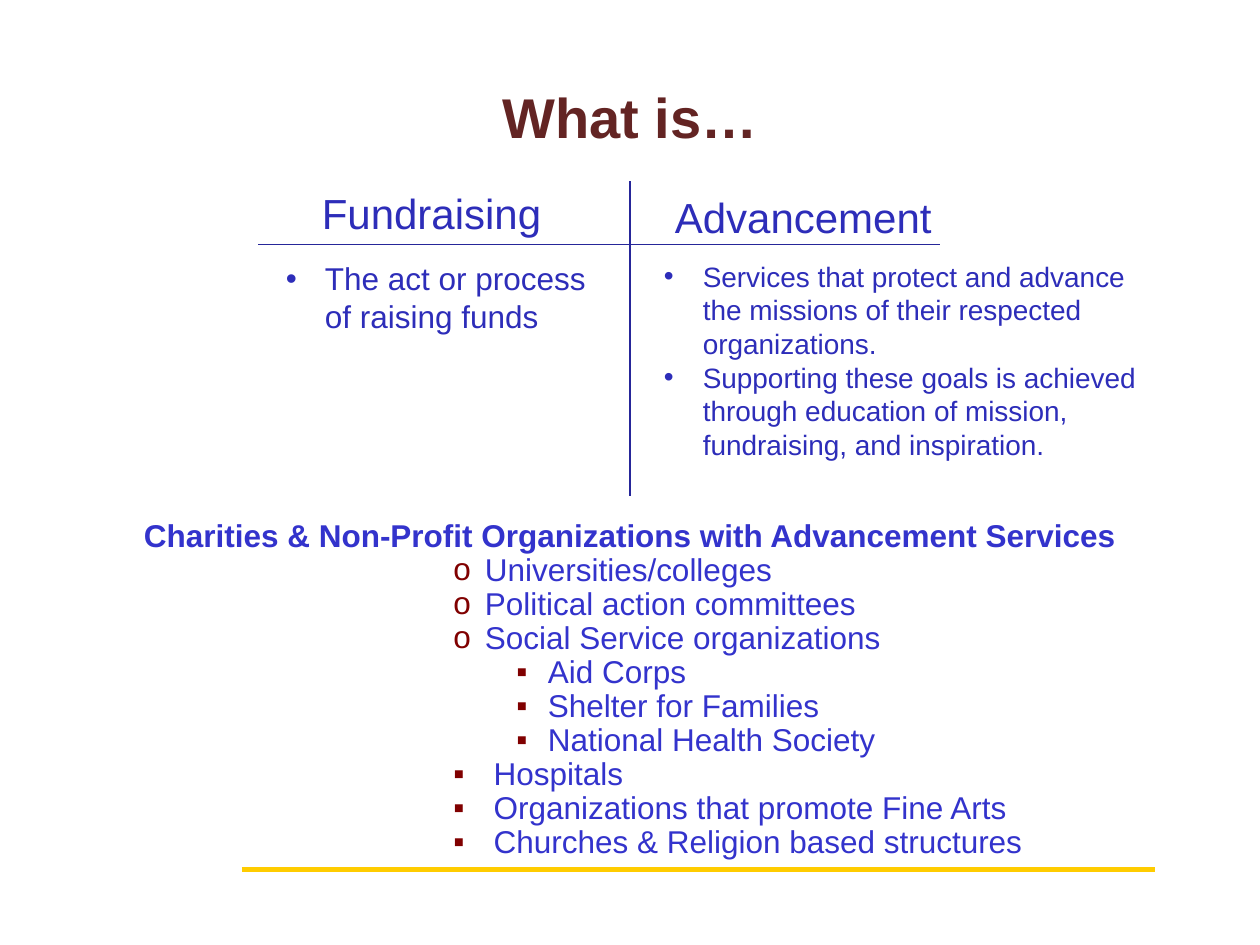
from dataclasses import dataclass

from lxml import etree
from pptx import Presentation, util as u
from pptx.dml.color import RGBColor
from pptx.enum import shapes, text
from pptx.oxml.ns import qn

WIDTH, HEIGHT = u.Inches(10), u.Inches(7.5)
FONT = "Arial"
MAROON = RGBColor(0x63, 0x24, 0x23)
DARK_RED = RGBColor(0x80, 0x00, 0x00)
BLUE = RGBColor(0x33, 0x33, 0xCC)
MID_BLUE = RGBColor(0x2D, 0x2D, 0xB9)
DARK_BLUE = RGBColor(0x26, 0x26, 0x99)
GOLD = RGBColor(0xFF, 0xCC, 0x00)


@dataclass(frozen=True)
class Bullet:
    """A bullet sign with its colour; margin and hang are in inches."""
    sign: str
    color: RGBColor
    margin: float
    hang: float
    level: int = 0


@dataclass(frozen=True)
class Style:
    size: float
    color: RGBColor
    bold: bool = False
    centered: bool = False
    line_spacing: float = 1.0


@dataclass(frozen=True)
class Line:
    """Ends as shares of the slide's width and height."""
    start: tuple[float, float]
    end: tuple[float, float]
    color: RGBColor
    width: float


@dataclass(frozen=True)
class Box:
    """Left, top, width and height as shares of the slide's size."""
    left: float
    top: float
    width: float
    height: float


DOT = Bullet("•", MID_BLUE, 0.31, 0.31)
CIRCLE = Bullet("o", DARK_RED, 3.25, 0.25, 6)
INNER_SQUARE = Bullet("▪", DARK_RED, 3.75, 0.25, 7)
OUTER_SQUARE = Bullet("▪", DARK_RED, 3.32, 0.32, 7)

HEADING = Style(24, MID_BLUE, centered=True)
LIST_TITLE = Style(18, BLUE, bold=True, centered=True, line_spacing=0.9)
LIST_ITEM = Style(18, BLUE, line_spacing=0.9)

LINES = [
    Line((0.192, 0.92), (0.917, 0.92), GOLD, 3),
    Line((0.205, 0.259), (0.746, 0.259), DARK_BLUE, 0.75),
    Line((0.5, 0.192), (0.5, 0.525), DARK_BLUE, 0.75),
]

COLUMNS = [
    (Box(0.244, 0.192, 0.197, 0.067), "Fundraising",
     Box(0.217, 0.268, 0.259, 0.095), Style(18, MID_BLUE),
     ["The act or process of raising funds"]),
    (Box(0.5, 0.196, 0.275, 0.067), "Advancement",
     Box(0.517, 0.268, 0.4, 0.229), Style(16, MID_BLUE),
     ["Services that protect and advance the missions of their "
      "respected organizations.",
      "Supporting these goals is achieved through education of mission, "
      "fundraising, and inspiration."]),
]

ORGANIZATIONS = [
    (CIRCLE, ["Universities/colleges", "Political action committees",
              "Social Service organizations"]),
    (INNER_SQUARE, ["Aid Corps", "Shelter for Families",
                    "National Health Society"]),
    (OUTER_SQUARE, ["Hospitals", "Organizations that promote Fine Arts",
                    "Churches & Religion based structures"]),
]


def place(shape, box: Box) -> None:
    shape.left, shape.top = int(WIDTH * box.left), int(HEIGHT * box.top)
    shape.width, shape.height = int(WIDTH * box.width), int(HEIGHT * box.height)


def add_line(slide, line: Line) -> None:
    (x1, y1), (x2, y2) = line.start, line.end
    connector = slide.shapes.add_connector(
        shapes.MSO_CONNECTOR.STRAIGHT, int(WIDTH * x1), int(HEIGHT * y1),
        int(WIDTH * x2), int(HEIGHT * y2))
    connector.line.color.rgb = line.color
    connector.line.width = u.Pt(line.width)
    etree.SubElement(connector._element.spPr, qn("a:effectLst"))


def set_bullet(paragraph, bullet: Bullet) -> None:
    paragraph.level = bullet.level
    properties = paragraph._p.get_or_add_pPr()
    properties.set("marL", str(u.Inches(bullet.margin)))
    properties.set("indent", str(-u.Inches(bullet.hang)))
    color = etree.SubElement(properties, qn("a:buClr"))
    etree.SubElement(color, qn("a:srgbClr"), val=str(bullet.color))
    etree.SubElement(properties, qn("a:buFont"), typeface=FONT)
    etree.SubElement(properties, qn("a:buChar"), char=bullet.sign)


def format_paragraph(paragraph, style: Style) -> None:
    paragraph.alignment = (text.PP_ALIGN.CENTER if style.centered
                           else text.PP_ALIGN.LEFT)
    paragraph.line_spacing = style.line_spacing
    paragraph.space_before = u.Pt(0)
    font = paragraph.font
    font.name, font.size, font.bold = FONT, u.Pt(style.size), style.bold
    font.color.rgb = style.color


def add_text(slide, box: Box,
             rows: list[tuple[str, Style, Bullet | None]]) -> None:
    shape = slide.shapes.add_textbox(0, 0, 0, 0)
    place(shape, box)
    frame = shape.text_frame
    frame.word_wrap = True
    for index, (words, style, bullet) in enumerate(rows):
        paragraph = frame.add_paragraph() if index else frame.paragraphs[0]
        paragraph.text = words
        if bullet:
            set_bullet(paragraph, bullet)
        format_paragraph(paragraph, style)


def main() -> None:
    presentation = Presentation()
    presentation.slide_width, presentation.slide_height = WIDTH, HEIGHT
    slide = presentation.slides.add_slide(presentation.slide_layouts[5])

    title = slide.shapes.title
    place(title, Box(0.05, 0.04, 0.9, 0.166))
    title.text_frame.text = "What is…"
    title.text_frame.vertical_anchor = text.MSO_ANCHOR.MIDDLE
    format_paragraph(title.text_frame.paragraphs[0],
                     Style(32, MAROON, bold=True, centered=True))

    for line in LINES:
        add_line(slide, line)
    for heading_box, heading, body_box, body_style, points in COLUMNS:
        add_text(slide, heading_box, [(heading, HEADING, None)])
        add_text(slide, body_box, [(point, body_style, DOT) for point in points])

    rows = [("Charities & Non-Profit Organizations with Advancement Services",
             LIST_TITLE, None)]
    rows += [(name, LIST_ITEM, bullet)
             for bullet, names in ORGANIZATIONS for name in names]
    add_text(slide, Box(0.05, 0.544, 0.9, 0.4), rows)
    presentation.save("out.pptx")


if __name__ == "__main__":
    main()
